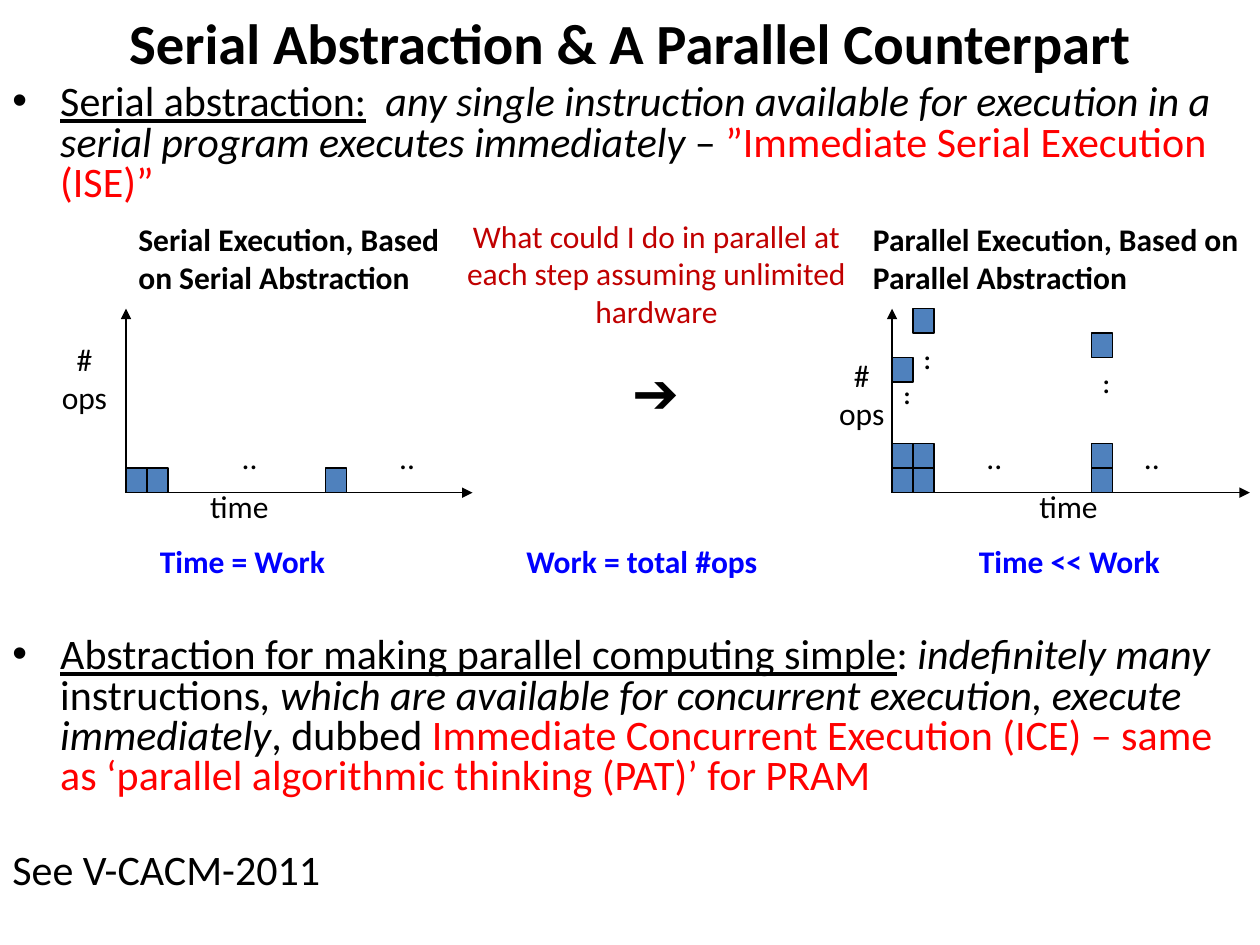
from lxml.etree import SubElement
from pptx import Presentation
from pptx.dml.color import RGBColor
from pptx.enum.shapes import MSO_CONNECTOR, MSO_SHAPE
from pptx.enum.text import MSO_ANCHOR, PP_ALIGN
from pptx.oxml.ns import qn
from pptx.util import Inches, Pt

BLACK = RGBColor(0x00, 0x00, 0x00)
RED = RGBColor(0xFF, 0x00, 0x00)
DARK_RED = RGBColor(0xC0, 0x00, 0x00)
BLUE = RGBColor(0x00, 0x00, 0xFF)
CELL_BLUE = RGBColor(0x4F, 0x81, 0xBD)

CELL_WIDTH, CELL_HEIGHT = 1 / 6, 0.195


def add_text(page, box, paras, wrap=True, **frame_format):
    """Each paragraph is (spans, format); each span is (text, font format)."""
    frame = page.shapes.add_textbox(*map(Inches, box)).text_frame
    frame.word_wrap = wrap
    for name, value in frame_format.items():
        setattr(frame, name, value)
    for index, (spans, para_format) in enumerate(paras):
        para = frame.paragraphs[0] if index == 0 else frame.add_paragraph()
        for name, value in para_format.items():
            setattr(para, name, value)
        for text, font_format in spans:
            span = para.add_run()
            span.text = text
            values = {"name": "Calibri", "size": Pt(18), **font_format}
            span.font.color.rgb = values.pop("color", BLACK)
            for name, value in values.items():
                setattr(span.font, name, value)
    return frame


def add_label(page, box, lines, wrap=False, align=PP_ALIGN.LEFT, **font_format):
    paras = [([(line, font_format)], {"alignment": align}) for line in lines]
    return add_text(page, box, paras, wrap)


def add_bullet(para):
    properties = para._p.get_or_add_pPr()
    properties.set("marL", str(Inches(0.38)))
    properties.set("indent", str(Inches(-0.38)))
    SubElement(properties, qn("a:buFont"), typeface="Arial")
    SubElement(properties, qn("a:buChar"), char="•")


def add_axis(page, start, end):
    axis = page.shapes.add_connector(
        MSO_CONNECTOR.STRAIGHT, *map(Inches, (*start, *end)))
    axis.line.color.rgb = BLACK
    axis.line.width = Pt(0.75)
    SubElement(axis.line._get_or_add_ln(), qn("a:tailEnd"), type="triangle")
    SubElement(axis._element.spPr, qn("a:effectLst"))


def add_cell(page, left, top):
    cell = page.shapes.add_shape(
        MSO_SHAPE.RECTANGLE,
        *map(Inches, (left, top, CELL_WIDTH, CELL_HEIGHT)))
    cell.shadow.inherit = False
    cell.fill.solid()
    cell.fill.fore_color.rgb = CELL_BLUE
    cell.line.color.rgb = BLACK
    cell.line.width = Pt(0.75)


def add_title(page, box):
    font = {"size": Pt(32.4), "bold": True}
    spans = [("Serial Abstraction & A Parallel Counterpart", font)]
    add_text(page, box, [(spans, {"alignment": PP_ALIGN.CENTER})],
             vertical_anchor=MSO_ANCHOR.MIDDLE)


def add_body(page, box):
    plain = {"size": Pt(24)}
    italic = {**plain, "italic": True}
    underlined = {**plain, "underline": True}
    red = {**plain, "color": RED}
    serial = [
        ("Serial abstraction:", underlined),
        ("  ", plain),
        ("any single instruction available for execution in a serial program "
         "executes immediately ", italic),
        ("– ", plain),
        ("”Immediate Serial Execution (ISE)”", red),
    ]
    parallel = [
        ("Abstraction for making parallel computing simple", underlined),
        (":", plain),
        (" indefinitely many ", italic),
        ("instructions", plain),
        (", which are available for concurrent execution, execute immediately",
         italic),
        (", dubbed ", plain),
        ("Immediate Concurrent Execution (ICE) – same as ‘parallel algorithmic "
         "thinking (PAT)’ for PRAM", red),
    ]
    reference = [("See V-CACM-2011", plain)]
    # The wide gap leaves room for the two diagrams
    gaps = ((serial, 0), (parallel, 247), (reference, 31))
    frame = add_text(
        page, box,
        [(spans, {"line_spacing": 0.8, "space_before": Pt(gap)})
         for spans, gap in gaps],
        margin_top=Inches(0.25))
    for para in frame.paragraphs[:2]:
        add_bullet(para)


def add_question(page, box):
    centred = {"alignment": PP_ALIGN.CENTER}
    add_text(page, box, [
        ([("What could I do in parallel at each step assuming unlimited hardware",
           {"color": DARK_RED})], centred),
        ([("➔", {"size": Pt(32)})], {**centred, "space_before": Pt(16)}),
    ])


def add_diagram(page, box, cells, dots, columns, ops_box, time_left):
    """Axes fill the box; cells are (column, row) counted from the origin."""
    left, top, width, height = box
    base = top + height
    add_axis(page, (left, base), (left, top))
    add_axis(page, (left, base), (left + width, base))
    for column, row in cells:
        add_cell(page, left + column * CELL_WIDTH,
                 base - (row + 1) * CELL_HEIGHT)
    # Horizontal and vertical ellipses
    for offset in dots:
        add_label(page, (left + offset, base - 0.48, 0.33, 0.4), [".."])
    for dot_left, dot_top, spacing in columns:
        add_text(page, (dot_left, dot_top, 0.26, 0.43),
                 [([(".", {})], {}), ([(".", {})], {"line_spacing": spacing})],
                 wrap=False)
    # Axis names
    add_label(page, ops_box, ["#", "ops"], align=PP_ALIGN.CENTER)
    add_label(page, (time_left, base - 0.09, 0.67, 0.4), ["time"])


def main():
    deck = Presentation()
    deck.slide_width, deck.slide_height = Inches(10), Inches(7.5)
    page = deck.slides.add_slide(deck.slide_layouts[6])

    add_title(page, (-0.25, 0, 10.5, 0.67))
    add_body(page, (0, 0.42, 10, 7.08))
    add_question(page, (3.5, 1.67, 3.42, 1.8))

    # Serial diagram
    add_diagram(page, (1, 2.45, 2.75, 1.46),
                cells=[(0, 0), (1, 0), (9.5, 0)],
                dots=(0.82, 2.07), columns=[],
                ops_box=(0.36, 2.65, 0.62, 0.7), time_left=1.57)
    # Parallel diagram
    add_diagram(page, (7.08, 2.45, 2.84, 1.46),
                cells=[(column, row)
                       for column, peak in ((0, 4.5), (1, 6.5), (9.5, 5.5))
                       for row in (0, 1, peak)],
                dots=(0.65, 1.9),
                columns=[(7.07, 2.85, 0.05), (7.23, 2.56, 0.1),
                         (8.65, 2.75, 0.1)],
                ops_box=(6.56, 2.78, 0.56, 0.7), time_left=8.15)

    # Headings and conclusions
    for box, text, color in (
        ((1, 1.7, 2.67, 0.7),
         "Serial Execution, Based on Serial Abstraction", BLACK),
        ((6.83, 1.7, 3.17, 0.77),
         "Parallel Execution, Based on Parallel Abstraction", BLACK),
        ((1.17, 4.25, 1.67, 0.4), "Time = Work", BLUE),
        ((4.08, 4.25, 2.17, 0.4), "Work = total #ops", BLUE),
        ((7.67, 4.25, 1.92, 0.4), "Time << Work", BLUE),
    ):
        add_label(page, box, [text], wrap=True, bold=True, color=color)

    deck.save("out.pptx")


if __name__ == "__main__":
    main()
